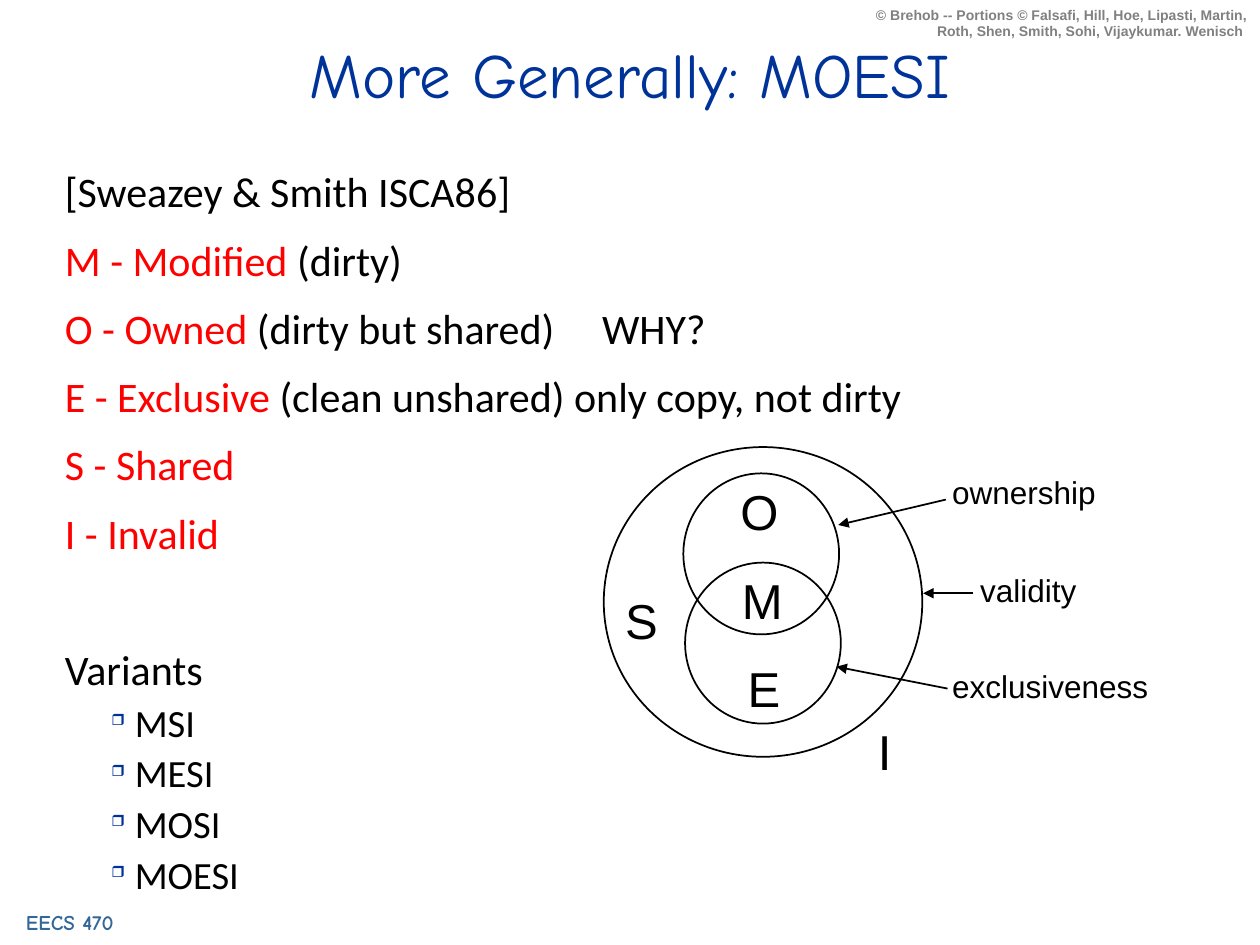
from lxml import etree
from pptx import Presentation
from pptx.dml.color import RGBColor
from pptx.enum.shapes import MSO_CONNECTOR, MSO_SHAPE
from pptx.enum.text import MSO_ANCHOR, PP_ALIGN
from pptx.oxml.ns import qn
from pptx.util import Pt

LEFT, MID, RIGHT = PP_ALIGN.LEFT, PP_ALIGN.CENTER, PP_ALIGN.RIGHT
TOP, CENTER = MSO_ANCHOR.TOP, MSO_ANCHOR.MIDDLE
OVAL, LINE = MSO_SHAPE.OVAL, MSO_CONNECTOR.STRAIGHT
COLORS = {"black": "000000", "red": "FF0000", "blue": "003399",
          "steel": "336699", "gray": "808080"}

STATES = [
    ("", "[Sweazey & Smith ISCA86]"),
    ("M - Modified", " (dirty)"),
    ("O - Owned", " (dirty but shared)\tWHY?"),
    ("E - Exclusive", " (clean unshared) only copy, not dirty"),
    ("S - Shared", ""),
    ("I - Invalid", ""),
]
VARIANTS = ["MSI", "MESI", "MOSI", "MOESI"]
CIRCLES = [(390.5, 270.5, 89, 92), (391.5, 321.5, 89, 92),
           (345, 255.5, 182, 177)]
LETTERS = [("O", 434, 271.5), ("M", 435.5, 322.5), ("E", 436.5, 373),
           ("S", 366.5, 334), ("I", 505.5, 409)]
LABELS = [("ownership", 537, 267), ("validity", 553, 323),
          ("exclusiveness", 537, 377.5)]
ARROWS = [(540.5, 285.5, 479, 300), (556, 339, 527.5, 339),
          (541.5, 393.5, 478, 381)]


def color(name):
    """Return a named colour."""
    return RGBColor.from_string(COLORS[name])


def add_run(para, text, size, font, tint, bold=False):
    """Append one styled run."""
    run = para.add_run()
    run.text = text
    run.font.size = Pt(size)
    run.font.name = font
    run.font.bold = bold
    run.font.color.rgb = color(tint)


def add_box(slide, box, wrap=True, anchor=TOP):
    """Add an empty text box and return its frame."""
    frame = slide.shapes.add_textbox(*map(Pt, box)).text_frame
    frame.word_wrap = wrap
    frame.vertical_anchor = anchor
    return frame


def add_text(slide, box, text, size, font, tint, align=LEFT, bold=False,
             wrap=True, anchor=TOP):
    """Add a text box with a single run."""
    para = add_box(slide, box, wrap, anchor).paragraphs[0]
    para.alignment = align
    add_run(para, text, size, font, tint, bold)


def add_para(frame, size, before):
    """Start a body paragraph with fixed line height."""
    first = frame.paragraphs[0]
    para = frame.add_paragraph() if first.runs else first
    para.line_spacing = Pt(size)
    para.space_before = Pt(before)
    return para


def add_tab(para, pos):
    """Set one left tab stop."""
    tabs = etree.SubElement(para._p.get_or_add_pPr(), qn("a:tabLst"))
    etree.SubElement(tabs, qn("a:tab"), pos=str(Pt(pos)), algn="l")


def add_bullet(para):
    """Give a paragraph a small blue box bullet."""
    props = para._p.get_or_add_pPr()
    props.set("marL", str(Pt(40)))
    props.set("indent", str(Pt(-13.5)))
    tint = etree.SubElement(props, qn("a:buClr"))
    etree.SubElement(tint, qn("a:srgbClr"), val=COLORS["blue"])
    etree.SubElement(props, qn("a:buSzPct"), val="40000")
    etree.SubElement(props, qn("a:buChar"), char="❒")


def add_body(slide):
    """Add the list of states and variants."""
    frame = add_box(slide, (30, 96, 672, 384))
    for head, tail in STATES:
        para = add_para(frame, 24, 15 if head else 0)
        if "\t" in tail:
            add_tab(para, 307)
        for text, tint in ((head, "red"), (tail, "black")):
            if text:
                add_run(para, text, 24, "Calibri", tint)
    add_run(add_para(frame, 24, 54), "Variants", 24, "Calibri", "black")
    for name in VARIANTS:
        para = add_para(frame, 22, 7)
        add_bullet(para)
        add_run(para, name, 22, "Calibri", "black")


def add_circle(slide, box):
    """Add an unfilled circle."""
    shape = slide.shapes.add_shape(OVAL, *map(Pt, box))
    shape.shadow.inherit = False
    shape.fill.background()
    shape.line.color.rgb = color("black")
    shape.line.width = Pt(1)


def add_arrow(slide, ends):
    """Add a line with an arrowhead at its end."""
    arrow = slide.shapes.add_connector(LINE, *map(Pt, ends))
    arrow.line.color.rgb = color("black")
    arrow.line.width = Pt(1)
    etree.SubElement(arrow.line._get_or_add_ln(), qn("a:tailEnd"),
                     type="triangle")
    etree.SubElement(arrow._element.spPr, qn("a:effectLst"))


def add_venn(slide):
    """Add the diagram of state properties."""
    for box in CIRCLES:
        add_circle(slide, box)
    for text, mid, top in LETTERS:
        add_text(slide, (mid - 19, top, 38, 41), text, 28, "Arial", "black",
                 MID, wrap=False)
    for text, left, top in LABELS:
        add_text(slide, (left, top, 127, 29), text, 18, "Arial", "black")
    for ends in ARROWS:
        add_arrow(slide, ends)


def main():
    """Build and save the slide."""
    deck = Presentation()
    deck.slide_width, deck.slide_height = Pt(720), Pt(540)
    slide = deck.slides.add_slide(deck.slide_layouts[6])
    add_text(slide, (-6, 516, 96, 22), "EECS 470 ", 12, "Comic Neue",
             "steel", MID, bold=True)
    add_text(slide, (492, 0, 228, 27),
             "© Brehob -- Portions © Falsafi, Hill, Hoe, Lipasti, Martin, "
             "Roth, Shen, Smith, Sohi, Vijaykumar. Wenisch ",
             8, "Arial", "gray", RIGHT, bold=True)
    add_text(slide, (27, 18, 666, 48), "More Generally: MOESI", 36,
             "Comic Neue", "blue", MID, anchor=CENTER)
    add_body(slide)
    add_venn(slide)
    deck.save("out.pptx")


if __name__ == "__main__":
    main()
